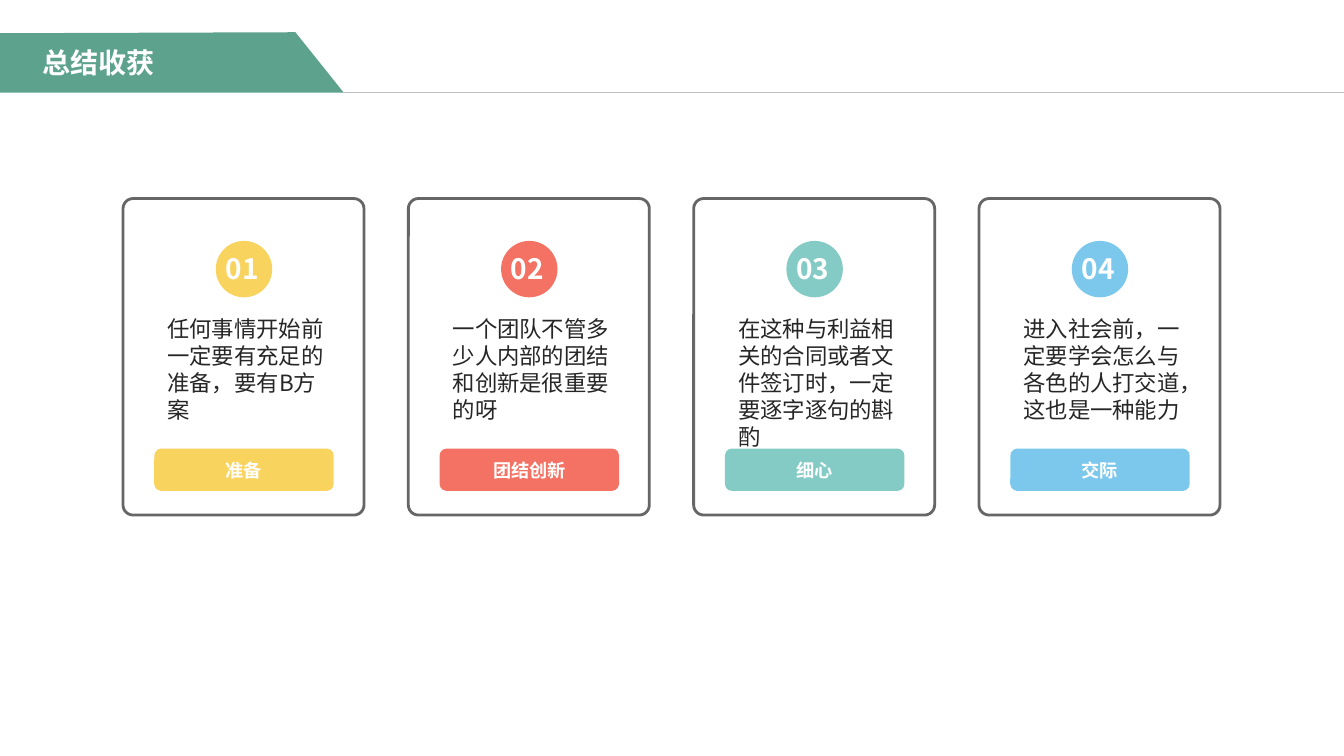
from dataclasses import dataclass

from lxml import etree
from pptx import Presentation
from pptx.dml.color import RGBColor
from pptx.enum import shapes, text
from pptx.oxml import ns
from pptx.util import Inches, Pt


@dataclass(frozen=True)
class Theme:
    font: str = "Noto Sans CJK SC"
    green: str = "5DA28D"
    rule: str = "BFBFBF"
    border: str = "666666"
    ink: str = "262626"
    white: str = "FFFFFF"
    accents: tuple = ("F8D35E", "F47264", "84CBC5", "7CC8EC")
    heading: int = 20
    body: int = 16
    label: int = 13


T = Theme()


def write(sp, content, size, color=T.white, bold=True, align=text.PP_ALIGN.LEFT,
          anchor=text.MSO_ANCHOR.TOP, inset=(0.1, 0.05), before=0):
    tf = sp.text_frame
    tf.word_wrap = True
    tf.auto_size = text.MSO_AUTO_SIZE.NONE
    tf.vertical_anchor = anchor
    tf.margin_left = tf.margin_right = Inches(inset[0])
    tf.margin_top = tf.margin_bottom = Inches(inset[1])
    p = tf.paragraphs[0]
    p.alignment = align
    p.space_before = Pt(before)
    r = p.add_run()
    r.text = content
    r.font.name, r.font.size, r.font.bold = T.font, Pt(size), bold
    r.font.color.rgb = RGBColor.from_string(color)
    ea = etree.SubElement(r.font._element, ns.qn("a:ea"))
    ea.set("typeface", T.font)


def style(sp, fill=None, line=None):
    sp.shadow.inherit = False
    if fill:
        sp.fill.solid()
        sp.fill.fore_color.rgb = RGBColor.from_string(fill)
    else:
        sp.fill.background()
    if line:
        sp.line.color.rgb = RGBColor.from_string(line)
        sp.line.width = Pt(2)
    else:
        sp.line.fill.background()


prs = Presentation()
prs.slide_width, prs.slide_height = Inches(13.33), Inches(7.5)
s = prs.slides.add_slide(prs.slide_layouts[5])

# Header band and rule
fb = s.shapes.build_freeform(0, Inches(0.33), scale=1.0)
fb.add_line_segments([(Inches(x), Inches(y)) for x, y in
                      [(2.93, 0.32), (3.41, 0.92), (0, 0.92)]])
style(fb.convert_to_shape(), fill=T.green)
rule = s.shapes.add_connector(shapes.MSO_CONNECTOR.STRAIGHT, Inches(3.4), Inches(0.91),
                              Inches(13.33), Inches(0.91))
rule.line.color.rgb = RGBColor.from_string(T.rule)
rule.line.width = Pt(0.25)
etree.SubElement(rule._element.spPr, ns.qn("a:effectLst"))

# Title, brought in front of the band
title = s.shapes.title
title.left, title.top, title.width, title.height = map(Inches, (0.32, 0.4, 2.58, 0.44))
write(title, "总结收获", T.heading)
s.shapes._spTree.append(title._element)

# Four cards at an equal pitch
CARD_LEFT, CARD_PITCH = 1.22, 2.83
cards = [
    ("准备", "任何事情开始前一定要有充足的准备，要有B方案"),
    ("团结创新", "一个团队不管多少人内部的团结和创新是很重要的呀"),
    ("细心", "在这种与利益相关的合同或者文件签订时，一定要逐字逐句的斟酌"),
    ("交际", "进入社会前，一定要学会怎么与各色的人打交道，这也是一种能力"),
]
for i, ((label, detail), accent) in enumerate(zip(cards, T.accents)):
    x = CARD_LEFT + i * CARD_PITCH

    frame = s.shapes.add_shape(shapes.MSO_SHAPE.ROUNDED_RECTANGLE, Inches(x), Inches(1.97),
                               Inches(2.39), Inches(3.14))
    frame.adjustments[0] = 0.042
    style(frame, line=T.border)

    tag = s.shapes.add_shape(shapes.MSO_SHAPE.ROUNDED_RECTANGLE, Inches(x + 0.31), Inches(4.45),
                             Inches(1.78), Inches(0.42))
    style(tag, fill=accent)
    write(tag, label, T.label, align=text.PP_ALIGN.CENTER, anchor=text.MSO_ANCHOR.MIDDLE)

    body = s.shapes.add_textbox(Inches(x + 0.31), Inches(3.06), Inches(1.91), Inches(1.05))
    write(body, detail, T.body, color=T.ink, bold=False, inset=(0.13, 0.07), before=3.2)

    badge = s.shapes.add_shape(shapes.MSO_SHAPE.OVAL, Inches(x + 0.92), Inches(2.39),
                               Inches(0.56), Inches(0.56))
    style(badge, fill=accent)
    number = s.shapes.add_textbox(Inches(x + 0.92), Inches(2.45), Inches(0.56), Inches(0.44))
    write(number, f"{i + 1:02d}", T.heading)

prs.save("out.pptx")
